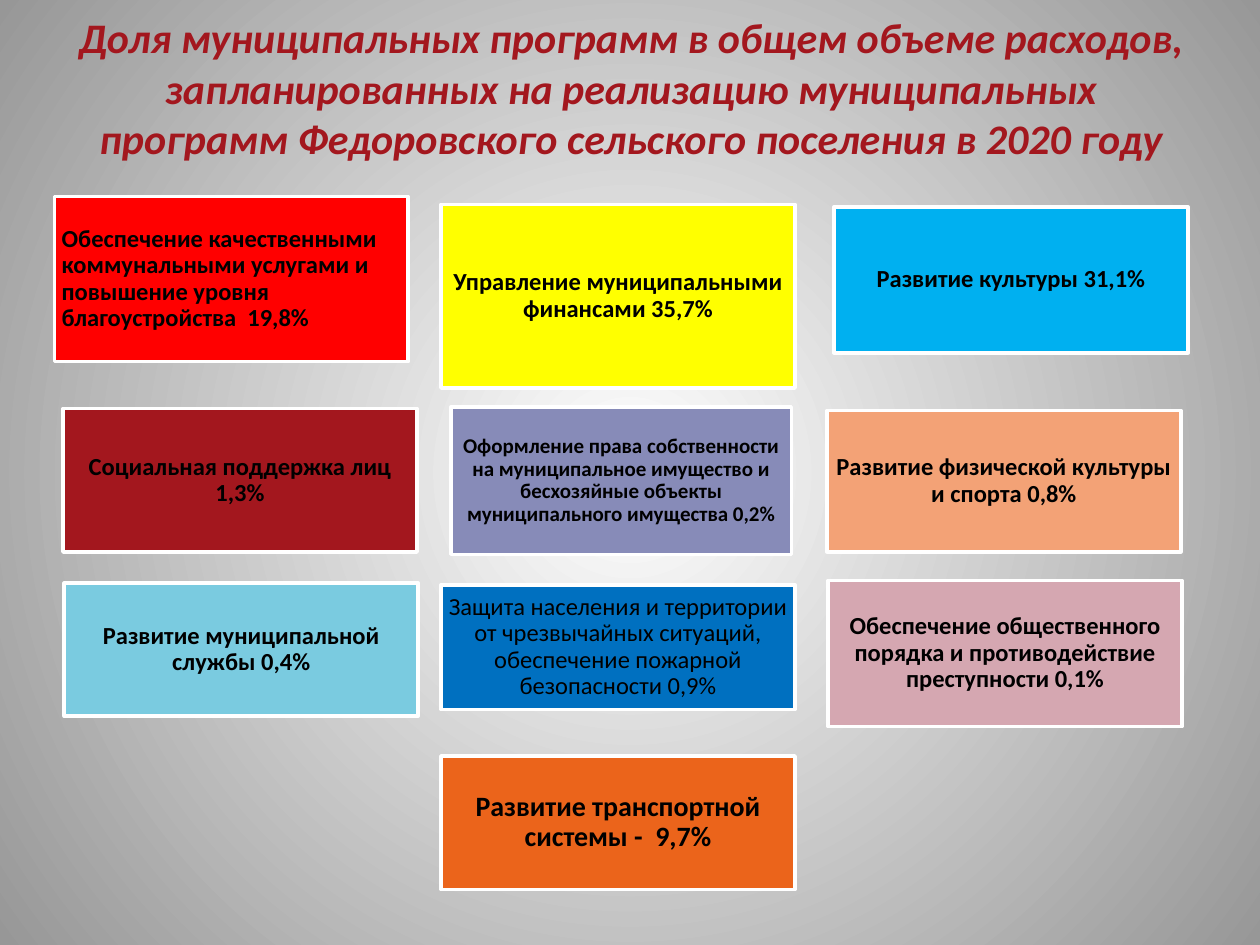
"""Build a slide showing each municipal programme's share of planned spending."""
from dataclasses import dataclass

from lxml.etree import SubElement
from pptx import Presentation
from pptx.dml.color import RGBColor
from pptx.enum.shapes import MSO_SHAPE
from pptx.enum.text import MSO_ANCHOR, PP_ALIGN
from pptx.oxml.ns import qn
from pptx.slide import Slide
from pptx.text.text import TextFrame
from pptx.util import Pt


@dataclass(frozen=True)
class Programme:
    text: str
    fill: str
    left: float
    top: float
    height: float
    width: float = 202.3
    size: int = 14
    inset: float = 4.2
    bold: bool = True
    align: PP_ALIGN = PP_ALIGN.CENTER


TITLE = (
    "Доля муниципальных программ в общем объеме расходов, запланированных на "
    "реализацию муниципальных программ Федоровского сельского поселения в 2020 году"
)
MIDDLE = 252
PROGRAMMES = [
    Programme("Обеспечение качественными коммунальными услугами и повышение уровня "
              "благоустройства  19,8%", "FF0000", 31, 112.3, 94.3, align=PP_ALIGN.LEFT),
    Programme("Управление муниципальными финансами 35,7%", "FFFF00", MIDDLE, 116.8, 105),
    Programme("Развитие культуры 31,1%", "00B0F0", 476.6, 118.2, 83.5),
    Programme("Социальная поддержка лиц 1,3%", "A3171E", 36, 233.5, 82),
    Programme("Оформление права собственности на муниципальное имущество и бесхозяйные "
              "объекты муниципального имущества 0,2%", "878BB8", 257.8, 232.6, 84.2,
              width=194.4, size=12, inset=3.6),
    Programme("Развитие физической культуры и спорта 0,8%", "F3A276", 472.5, 234.6, 80.8),
    Programme("Развитие муниципальной службы 0,4%", "7ACBE0", 36.7, 333.2, 76),
    Programme("Защита населения и территории от чрезвычайных ситуаций, обеспечение "
              "пожарной безопасности 0,9%", "0070C0", MIDDLE, 334.2, 71.3, bold=False),
    Programme("Обеспечение общественного порядка и противодействие преступности 0,1%",
              "D5A7B1", 473.2, 331.7, 83.5),
    Programme("Развитие транспортной системы -  9,7%", "EB641B", MIDDLE, 432, 76.3,
              size=16, inset=4.8),
]


def rgb(value: str) -> RGBColor:
    """Turn a hex string into a colour."""
    return RGBColor.from_string(value)


def write(tf: TextFrame, text: str, size: int, color: str, bold: bool = True,
          italic: bool = False, align: PP_ALIGN = PP_ALIGN.CENTER,
          spacing: float = 1.0) -> None:
    """Fill a text frame with one vertically centred paragraph."""
    tf.word_wrap = True
    tf.vertical_anchor = MSO_ANCHOR.MIDDLE
    p = tf.paragraphs[0]
    p.alignment = align
    p.line_spacing = spacing
    r = p.add_run()
    r.text = text
    r.font.name = "Calibri"
    r.font.size = Pt(size)
    r.font.bold = bold
    r.font.italic = italic
    r.font.color.rgb = rgb(color)


def paint_background(s: Slide, centre: str, edge: str) -> None:
    """Give the slide a circular gradient from its centre outwards."""
    fill = s.background.fill
    fill.gradient()
    for stop, color in zip(fill.gradient_stops, (centre, edge)):
        stop.color.rgb = rgb(color)
    grad = next(s.element.iter(qn("a:gradFill")))
    grad.remove(grad.find(qn("a:lin")))
    circle = SubElement(grad, qn("a:path"), path="circle")
    SubElement(circle, qn("a:fillToRect"), {side: "50000" for side in "ltrb"})


def draw_title(s: Slide) -> None:
    """Add the slide heading."""
    tf = s.shapes.add_textbox(Pt(36.7), Pt(0), Pt(648), Pt(100)).text_frame
    write(tf, TITLE, 24, "A3171E", italic=True)


def draw_programme(s: Slide, item: Programme) -> None:
    """Draw one programme as a coloured box with its share."""
    sp = s.shapes.add_shape(MSO_SHAPE.RECTANGLE, Pt(item.left), Pt(item.top),
                            Pt(item.width), Pt(item.height))
    sp.shadow.inherit = False
    sp.fill.solid()
    sp.fill.fore_color.rgb = rgb(item.fill)
    sp.line.color.rgb = rgb("FFFFFF")
    sp.line.width = Pt(2)
    tf = sp.text_frame
    tf.margin_left = tf.margin_right = Pt(item.inset)
    tf.margin_top = tf.margin_bottom = Pt(item.inset)
    write(tf, item.text, item.size, "000000", item.bold, align=item.align, spacing=0.9)


def main() -> None:
    """Build and save the presentation."""
    prs = Presentation()
    prs.slide_width, prs.slide_height = Pt(720), Pt(540)
    s = prs.slides.add_slide(prs.slide_layouts[6])
    paint_background(s, "FFFFFF", "979797")
    draw_title(s)
    for item in PROGRAMMES:
        draw_programme(s, item)
    prs.save("out.pptx")


if __name__ == "__main__":
    main()
